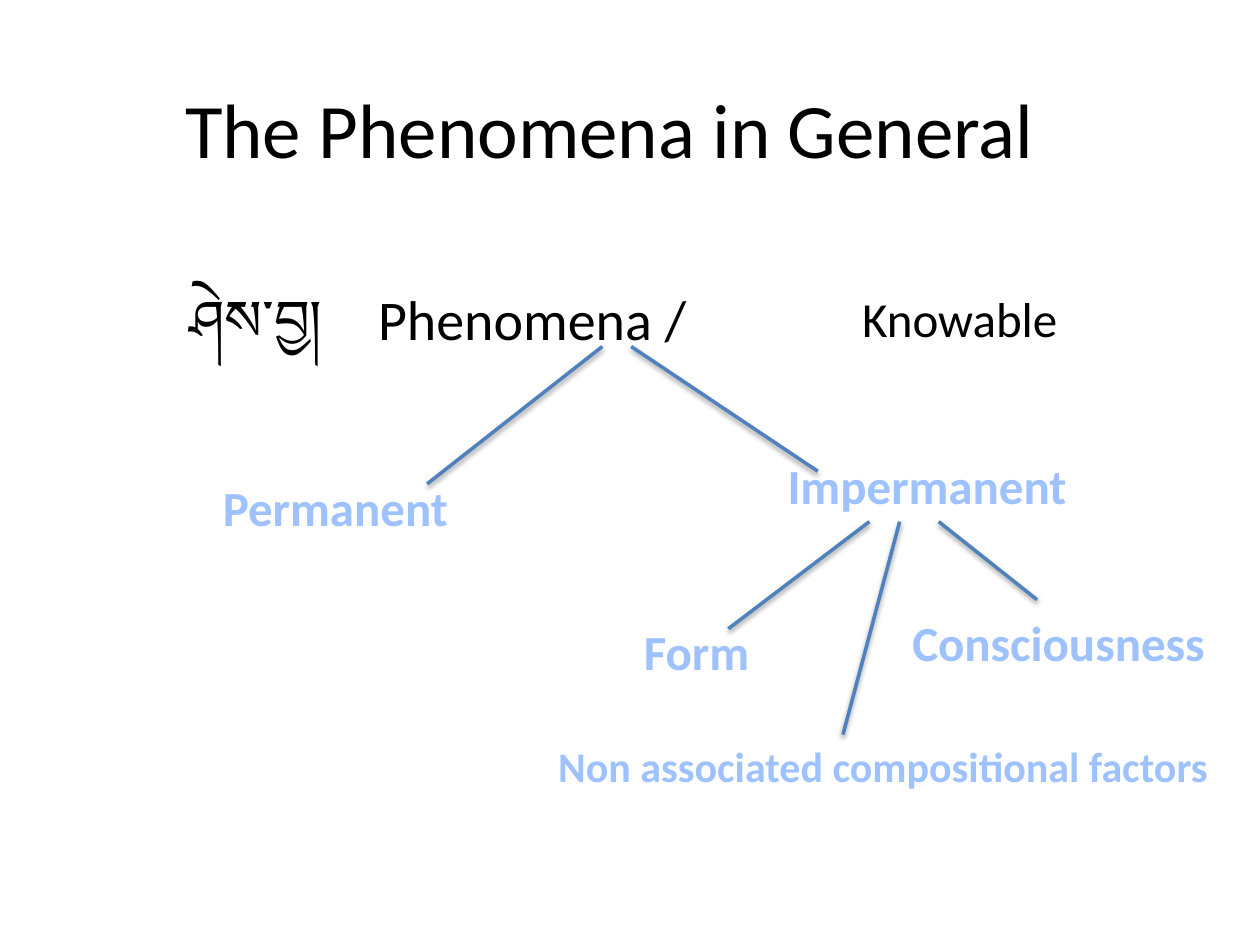
from lxml.etree import SubElement
from pptx import Presentation
from pptx.dml.color import RGBColor
from pptx.enum.shapes import MSO_CONNECTOR
from pptx.enum.text import MSO_ANCHOR, MSO_AUTO_SIZE, PP_ALIGN
from pptx.oxml.ns import qn
from pptx.util import Pt

COLORS = {"text": "000000", "category": "9EC1FF", "branch": "4F81BD", "shadow": "000000"}
INSET = 3.6

TITLE = ("The Phenomena in General ", (47.5, 15.1, 612, 115.9))
ROOT = ([("ཤེས་བྱ།", "Roboto"), ("\tPhenomena /", "Calibri")], (4.3, 159.1, 695.5, 363.6))
ROOT_INDENT = 103.7
ROOT_TAB = 109.4
SYNONYM = ("Knowable", (475.9, 161.3, 132.5, 35.3))
SYNONYM_INDENT = 16.8
CATEGORIES = [
    ("Permanent", (123.8, 269.3, 170.6, 35.3), 28),
    ("Impermanent", (446.4, 257, 181.4, 35.3), 28),
    ("Form", (364.3, 351.4, 72, 35.3), 28),
    ("Consciousness", (517.7, 346.3, 179.3, 35.3), 28),
    ("Non associated compositional factors", (315.4, 419.8, 391, 31), 24),
]
BRANCHES = [
    (198, [(344.2, 244.1, 276.5), (360.7, 467.3, 269.3)]),
    (298.1, [(514.1, 481.7, 419.8), (496.8, 416.2, 359.3), (536.4, 592.6, 342.7)]),
]


def write_text(shape, runs, size=28, color="text", bold=False, align=PP_ALIGN.LEFT,
               anchor=MSO_ANCHOR.TOP, indent=INSET, before=0, wrap=True):
    frame = shape.text_frame
    frame.auto_size = MSO_AUTO_SIZE.NONE
    frame.word_wrap = wrap
    frame.vertical_anchor = anchor
    frame.margin_left = Pt(indent)
    frame.margin_right = frame.margin_top = frame.margin_bottom = Pt(INSET)
    paragraph = frame.paragraphs[0]
    paragraph.alignment = align
    paragraph.space_before = Pt(before)
    for text, font_name in runs:
        run = paragraph.add_run()
        run.text = text
        run.font.name = font_name
        run.font.size = Pt(size)
        run.font.bold = bold
        run.font.color.rgb = RGBColor.from_string(COLORS[color])
    return paragraph


def place(shape, box):
    shape.left, shape.top, shape.width, shape.height = map(Pt, box)
    return shape


def add_tab_stop(paragraph, position):
    properties = paragraph._p.get_or_add_pPr()
    tabs = SubElement(properties, qn("a:tabLst"))
    SubElement(tabs, qn("a:tab"), pos=str(Pt(position)), algn="l")


def add_branch(slide, start, end):
    connector = slide.shapes.add_connector(MSO_CONNECTOR.STRAIGHT, *map(Pt, start + end))
    connector.line.color.rgb = RGBColor.from_string(COLORS["branch"])
    connector.line.width = Pt(2)
    effects = SubElement(connector._element.spPr, qn("a:effectLst"))
    shadow = SubElement(effects, qn("a:outerShdw"), blurRad=str(Pt(3)),
                        dist=str(Pt(1.6)), dir="5400000", rotWithShape="0")
    color = SubElement(shadow, qn("a:srgbClr"), val=COLORS["shadow"])
    SubElement(color, qn("a:alpha"), val="38000")


def main():
    presentation = Presentation()
    presentation.slide_width, presentation.slide_height = Pt(720), Pt(540)
    slide = presentation.slides.add_slide(presentation.slide_layouts[0])

    text, box = TITLE
    write_text(place(slide.shapes.title, box), [(text, "Calibri")], size=44,
               align=PP_ALIGN.CENTER, anchor=MSO_ANCHOR.MIDDLE)

    runs, box = ROOT
    paragraph = write_text(place(slide.placeholders[1], box), runs, size=32,
                           indent=ROOT_INDENT, before=7)
    add_tab_stop(paragraph, ROOT_TAB)

    for text, box, size in CATEGORIES:
        write_text(slide.shapes.add_textbox(*map(Pt, box)), [(text, "Calibri")],
                   size=size, color="category", bold=True)

    for top, branches in BRANCHES:
        for start_x, end_x, end_y in branches:
            add_branch(slide, (start_x, top), (end_x, end_y))

    text, box = SYNONYM
    write_text(slide.shapes.add_textbox(*map(Pt, box)), [(text, "Calibri")],
               indent=SYNONYM_INDENT, wrap=False)

    presentation.save("out.pptx")


if __name__ == "__main__":
    main()
